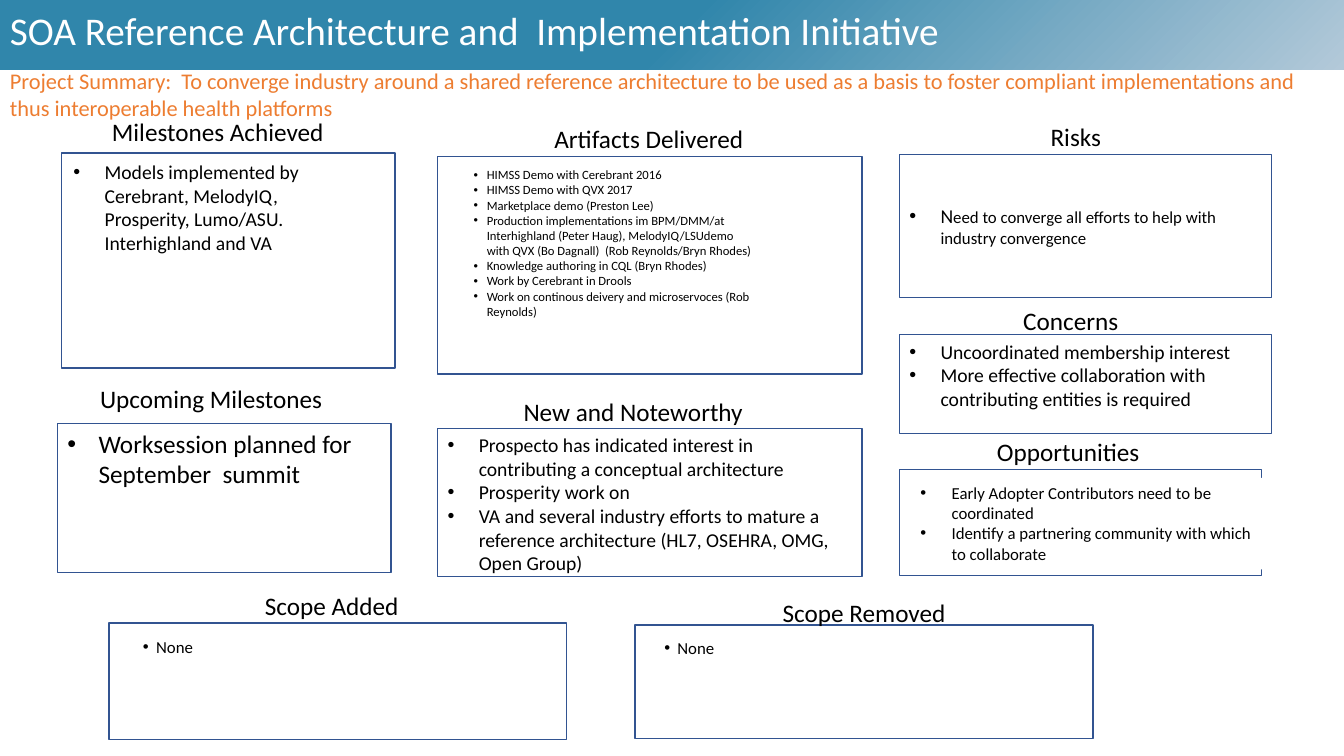
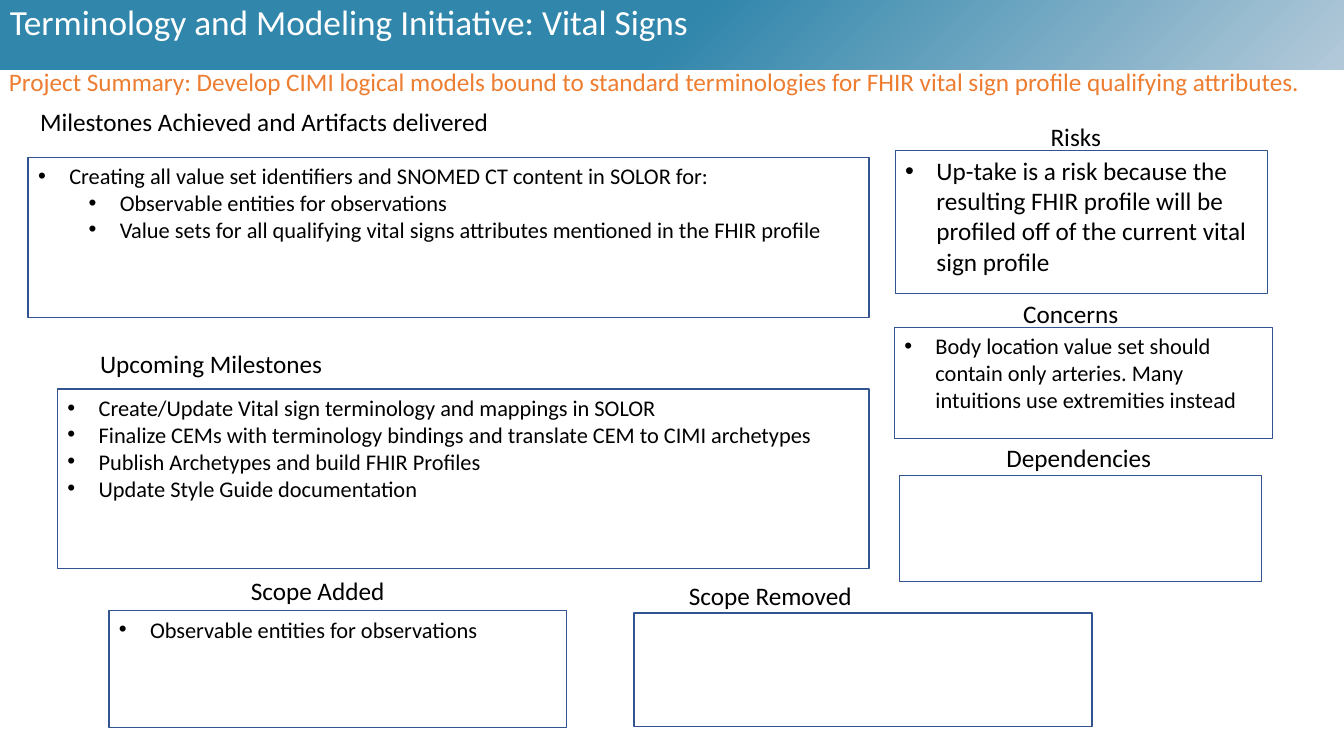
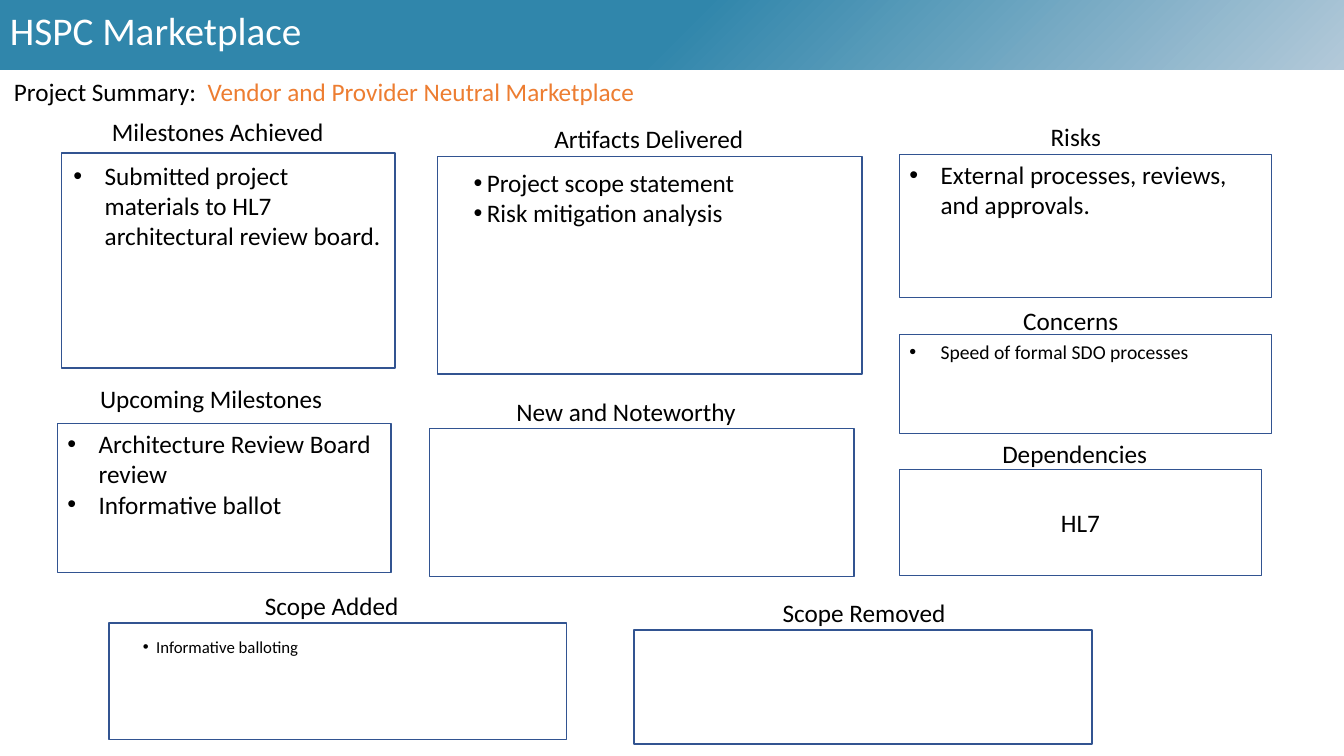
import pptx
import pptx.util
import pptx.dml.color
import pptx.enum.shapes
import pptx.enum.text
import pptx.oxml
import pptx.oxml.ns

Inches = pptx.util.Inches
Anchor = pptx.enum.text.MSO_ANCHOR
Align = pptx.enum.text.PP_ALIGN

FONT = "Calibri"
WHITE, BLACK, BLUE, ORANGE = "FFFFFF", "000000", "325491", "ED7D31"
WIDE, NARROW = 0.31, 0.13  # hanging indents of the bullets
BAND = """<a:gradFill xmlns:a="http://schemas.openxmlformats.org/drawingml/2006/main" rotWithShape="1">
<a:gsLst>
<a:gs pos="0"><a:srgbClr val="B3C9D9"/></a:gs>
<a:gs pos="50000"><a:srgbClr val="3086AB"/></a:gs>
<a:gs pos="98000"><a:srgbClr val="3086AB"/></a:gs>
</a:gsLst>
<a:path path="circle"><a:fillToRect l="100000" t="100000"/></a:path>
</a:gradFill>"""


def rgb(code):
    return pptx.dml.color.RGBColor.from_string(code)


def box(slide, at, rows=(), panel=False, line=None, hang=0,
        align=Align.LEFT, anchor=Anchor.TOP, wrap=True, space=None):
    """Add a white panel or a bare text box; each row is (level, runs of (text, size, colour))."""
    at = [Inches(n) for n in at]
    if panel:
        shape = slide.shapes.add_shape(pptx.enum.shapes.MSO_SHAPE.RECTANGLE, *at)
        shape.shadow.inherit = False
        shape.fill.solid()
        shape.fill.fore_color.rgb = rgb(WHITE)
        if line:
            shape.line.color.rgb = rgb(line)
            shape.line.width = pptx.util.Pt(1)
        else:
            shape.line.fill.background()
    else:
        shape = slide.shapes.add_textbox(*at)
    frame = shape.text_frame
    frame.word_wrap = wrap
    frame.vertical_anchor = anchor
    for i, (level, runs) in enumerate(rows):
        para = frame.add_paragraph() if i else frame.paragraphs[0]
        para.alignment = align
        para.level = level
        if space:
            para.line_spacing = space
        if hang:
            props = para._p.get_or_add_pPr()
            props.set("marL", str(Inches(hang + level / 2)))
            props.set("indent", str(-Inches(hang)))
            for tag, key, value in (("buFont", "typeface", "Arial"), ("buChar", "char", "•")):
                mark = pptx.oxml.ns.qn("a:" + tag)
                props.append(props.makeelement(mark, {key: value}))
        for text, size, colour in runs:
            run = para.add_run()
            run.text = text
            run.font.name = FONT
            run.font.size = pptx.util.Pt(size)
            run.font.color.rgb = rgb(colour)
    return shape


# Panel: heading, place of the heading (left, top, width), place of the frame
GRID = {
    "done": ("Milestones Achieved", (1, 1.11, 2.32), (0.61, 1.52, 3.31, 2.13)),
    "next": ("Upcoming Milestones", (0.88, 3.75, 2.43), (0.57, 4.2, 3.31, 1.48)),
    "made": ("Artifacts Delivered", (5.38, 1.17, 2.11), (4.34, 1.55, 4.21, 2.16)),
    "news": ("New and Noteworthy", (5.08, 3.88, 2.4), (4.34, 4.25, 4.21, 1.47)),
    "risk": ("Risks", (10.32, 1.15, 0.7), (8.92, 1.53, 3.69, 1.42)),
    "care": ("Concerns", (10.04, 2.98, 1.16), (8.92, 3.32, 3.69, 0.98)),
    "last": ("Dependencies", (9.83, 4.3, 1.66), (8.92, 4.66, 3.59, 1.05)),
    "plus": ("Scope Added", (2.52, 5.81, 1.54), (1.08, 6.18, 4.54, 1.16)),
    "less": ("Scope Removed", (7.65, 5.88, 1.84), (6.29, 6.25, 4.54, 1.13)),
}

# Body: size, rows, then settings; "at" sets the text in a panel of its own inside the frame
SLIDES = [
    {
        "title": ("SOA Reference Architecture and  Implementation Initiative", 28, Anchor.MIDDLE),
        "lead": ((0, 0.62, 13.31, 0.64), [
            ("Project Summary:  To converge industry around a shared reference architecture "
             "to be used as a basis to foster compliant implementations and thus "
             "interoperable health platforms", 16, ORANGE)]),
        "grid": GRID | {
            "last": ("Opportunities", (9.78, 4.28, 1.63), GRID["last"][2]),
            "less": ("Scope Removed", GRID["less"][1], (6.3, 6.2, 4.54, 1.13)),
        },
        "body": {
            "done": (14, ["Models implemented by Cerebrant, MelodyIQ, Prosperity, Lumo/ASU. "
                          "Interhighland and VA"], {"at": (0.63, 1.54, 3.06, 1.04)}),
            "next": (18, ["Worksession planned for September  summit"], {}),
            "made": (9, ["HIMSS Demo with Cerebrant 2016",
                         "HIMSS Demo with QVX 2017",
                         "Marketplace demo (Preston Lee)",
                         "Production implementations im BPM/DMM/at Interhighland (Peter Haug), "
                         "MelodyIQ/LSUdemo with QVX (Bo Dagnall)  (Rob Reynolds/Bryn Rhodes)",
                         "Knowledge authoring in CQL (Bryn Rhodes)",
                         "Work by Cerebrant in Drools",
                         "Work on continous deivery and microservoces (Rob Reynolds)"],
                     {"at": (4.6, 1.61, 2.96, 1.77), "hang": NARROW}),
            "news": (14, ["Prospecto has indicated interest in contributing a conceptual architecture",
                          "Prosperity work on",
                          "VA and several industry efforts to mature a reference architecture "
                          "(HL7, OSEHRA, OMG, Open Group)"], {}),
            "risk": (12, [(0, [("N", 14, BLACK),
                               ("eed to converge all efforts to help with industry convergence",
                                12, BLACK)])], {"anchor": Anchor.MIDDLE}),
            "care": (14, ["Uncoordinated membership interest",
                          "More effective collaboration with contributing entities is required"], {}),
            "last": (12, ["Early Adopter Contributors need to be coordinated",
                          "Identify a partnering community with which to collaborate"],
                     {"at": (9.03, 4.74, 3.49, 0.91)}),
            "plus": (12, ["None"], {"at": (1.32, 6.27, 4.06, 0.3), "hang": NARROW}),
            "less": (12, ["None"], {"at": (6.49, 6.28, 4.06, 0.3), "hang": NARROW}),
        },
    },
    {
        "title": ("Terminology and Modeling Initiative: Vital Signs", 25.2, Anchor.TOP),
        "lead": ((-0.01, 0.61, 13.35, 0.4), [
            ("Project Summary: Develop CIMI logical models bound to standard terminologies "
             "for FHIR vital sign profile qualifying attributes.", 18, ORANGE)]),
        "grid": {
            "done": ("Milestones Achieved and Artifacts delivered", (0.25, 1.01, 4.74),
                     (0.28, 1.56, 8.34, 1.59)),
            "next": ("Upcoming Milestones", (0.88, 3.41, 2.43), (0.57, 3.86, 8.05, 1.78)),
            "risk": ("Risks", GRID["risk"][1], (8.88, 1.49, 3.69, 1.42)),
            "care": ("Concerns", (10.04, 2.91, 1.16), (8.87, 3.25, 3.75, 1.1)),
            "last": ("Dependencies", (9.87, 4.34, 1.66), (8.92, 4.72, 3.59, 1.05)),
            "plus": ("Scope Added", (2.38, 5.66, 1.54), (1.08, 6.06, 4.54, 1.16)),
            "less": ("Scope Removed", (6.72, 5.71, 1.84), (6.29, 6.08, 4.54, 1.13)),
        },
        "body": {
            "done": (16, ["Creating all value set identifiers and SNOMED CT content in SOLOR for:",
                          (1, [("Observable entities for observations", 16, BLACK)]),
                          (1, [("Value sets for all qualifying vital signs attributes mentioned "
                                "in the FHIR profile", 16, BLACK)])], {}),
            "next": (16, ["Create/Update Vital sign terminology and mappings in SOLOR",
                          "Finalize CEMs with terminology bindings and translate CEM to CIMI archetypes",
                          "Publish Archetypes and build FHIR Profiles",
                          "Update Style Guide documentation"], {}),
            "risk": (18, ["Up-take is a risk because the resulting FHIR profile will be profiled "
                          "off of the current vital sign profile"], {}),
            "care": (16, ["Body location value set should contain only arteries. Many intuitions "
                          "use extremities instead"], {}),
            "plus": (16, ["Observable entities for observations"], {}),
        },
    },
    {
        "title": ("HSPC Marketplace", 28, Anchor.MIDDLE),
        "lead": ((0.04, 0.71, 13.3, 0.4), [
            ("Project Summary:  ", 18, BLACK),
            ("Vendor and Provider Neutral Marketplace", 18, ORANGE)]),
        "grid": GRID | {
            "news": ("New and Noteworthy", (5.01, 3.88, 2.4), (4.26, 4.25, 4.21, 1.47)),
        },
        "body": {
            "done": (18, ["Submitted project materials to HL7 architectural review board."],
                     {"at": (0.63, 1.54, 3.25, 1.01)}),
            "next": (18, ["Architecture Review Board review", "Informative ballot"], {}),
            "made": (18, ["Project scope statement", "Risk mitigation analysis"],
                     {"at": (4.6, 1.61, 3.64, 1.01), "hang": NARROW}),
            "risk": (18, ["External processes, reviews, and approvals."], {}),
            "care": (14, ["Speed of formal SDO processes"], {}),
            "last": (18, ["HL7"], {"hang": 0, "align": Align.CENTER, "anchor": Anchor.MIDDLE}),
            "plus": (12, ["Informative balloting"],
                     {"at": (1.32, 6.27, 4.06, 0.5), "hang": NARROW}),
        },
    },
]

deck = pptx.Presentation()
deck.slide_width, deck.slide_height = Inches(13.33), Inches(7.5)

for page in SLIDES:
    slide = deck.slides.add_slide(deck.slide_layouts[6])
    band = box(slide, (0, 0, 13.33, 0.69), panel=True)
    plain = band._element.spPr.find(pptx.oxml.ns.qn("a:solidFill"))
    plain.getparent().replace(plain, pptx.oxml.parse_xml(BAND))

    for name, (head, spot, area) in page["grid"].items():
        size, rows, extra = page["body"].get(name, (18, [], {}))
        rows = [(0, [(row, size, BLACK)]) if isinstance(row, str) else row for row in rows]
        style = {"hang": WIDE} | extra
        if "at" in style:
            box(slide, area, panel=True, line=BLUE)
            box(slide, style.pop("at"), rows, panel=True, **style)
        else:
            box(slide, area, rows, panel=True, line=BLUE, **style)
        box(slide, (*spot, 0.4), [(0, [(head, 18, BLACK)])], align=Align.CENTER, wrap=False)

    spot, runs = page["lead"]
    box(slide, spot, [(0, runs)])
    text, size, anchor = page["title"]
    box(slide, (0, 0, 13.33, 0.66), [(0, [(text, size, WHITE)])], anchor=anchor, space=0.9)

deck.save("out.pptx")
